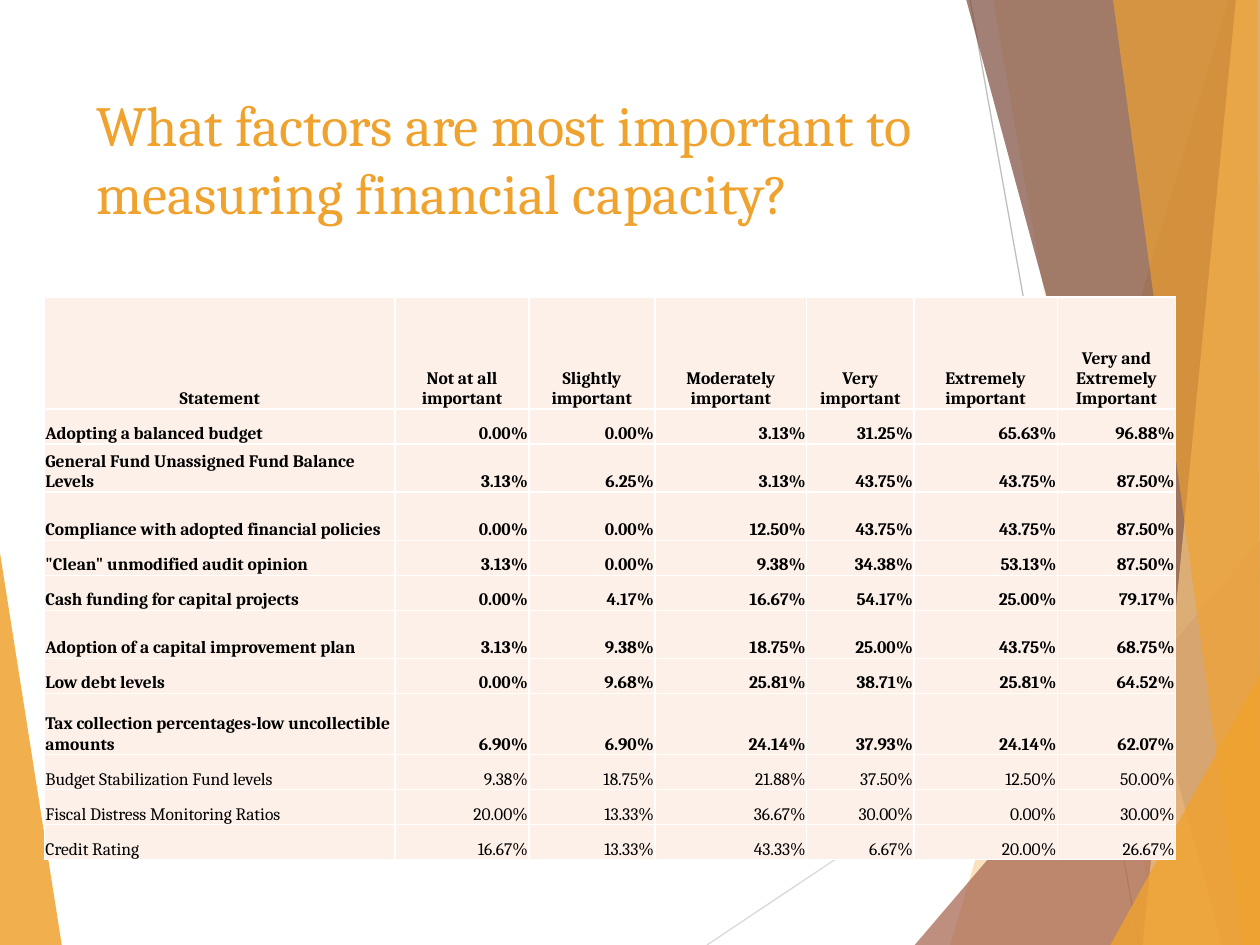
from pptx import Presentation
from pptx.util import Pt
from pptx.dml.color import RGBColor
from pptx.enum.shapes import MSO_CONNECTOR
from pptx.enum.text import MSO_ANCHOR, PP_ALIGN
from pptx.oxml.ns import qn
from lxml.etree import SubElement

W, H = 720, 540
FONT = "Cambria"
TITLE = "What factors are most important to measuring financial capacity?"

LEFT_WEDGE = ([(0, 316), (35.3, H), (0, H)], "F0A22E", 85)
RIGHT_FACETS = [
    ([(702, 0), (543, H), (W, H), (W, 0)], "F0A22E", 30),
    ([(567.4, 0), (661.7, H), (W, H), (W, 0)], "F0A22E", 20),
    ([(522.7, H), (W, 309), (W, H)], "A5644E", 72),
    ([(552.2, 0), (698.4, H), (W, H), (W, 0)], "7C4B3B", 70),
    ([(706.3, 0), (653, H), (W, H), (W, 0)], "F6C782", 70),
    ([(636, 0), (710, H), (W, H), (718.6, 0)], "F0A22E", 65),
    ([(634.5, H), (W, 385.5), (W, H)], "F0A22E", 80),
]
LINES = [((404, H), (W, 329), "D9D9D9"), ((554.4, 0), (651, H), "BFBFBF")]

HEADERS = ["Statement", "Not at all important", "Slightly important", "Moderately important",
           "Very important", "Extremely important", "Very and Extremely Important"]
ROWS = [
    ("Adopting a balanced budget", 0, 0, 3.13, 31.25, 65.63, 96.88),
    ("General Fund Unassigned Fund Balance Levels", 3.13, 6.25, 3.13, 43.75, 43.75, 87.5),
    ("Compliance with adopted financial policies", 0, 0, 12.5, 43.75, 43.75, 87.5),
    ('"Clean" unmodified audit opinion', 3.13, 0, 9.38, 34.38, 53.13, 87.5),
    ("Cash funding for capital projects", 0, 4.17, 16.67, 54.17, 25, 79.17),
    ("Adoption of a capital improvement plan", 3.13, 9.38, 18.75, 25, 43.75, 68.75),
    ("Low debt levels", 0, 9.68, 25.81, 38.71, 25.81, 64.52),
    ("Tax collection percentages-low uncollectible amounts", 6.9, 6.9, 24.14, 37.93, 24.14, 62.07),
    ("Budget Stabilization Fund levels", 9.38, 18.75, 21.88, 37.5, 12.5, 50),
    ("Fiscal Distress Monitoring Ratios", 20, 13.33, 36.67, 30, 0, 30),
    ("Credit Rating", 16.67, 13.33, 43.33, 6.67, 20, 26.67),
]
BOLD_ROWS = 8
COL_WIDTHS = [200.4, 76.4, 72, 86.8, 61.2, 82, 67.6]
ROW_HEIGHTS = [64, 20, 27.5, 27.5, 20, 20, 27.5, 20, 35, 20, 20, 20]


def rgb(value):
    return RGBColor.from_string(value)


def style(p, size, color, bold=False):
    for r in p.runs:
        r.font.name = FONT
        r.font.size = Pt(size)
        r.font.bold = bold
        r.font.color.rgb = rgb(color)


def add_facet(s, points, color, opacity):
    fb = s.shapes.build_freeform(Pt(points[0][0]), Pt(points[0][1]))
    fb.add_line_segments([(Pt(x), Pt(y)) for x, y in points[1:]], close=True)
    sp = fb.convert_to_shape()
    sp.shadow.inherit = False
    sp.line.fill.background()
    sp.fill.solid()
    sp.fill.fore_color.rgb = rgb(color)
    clr = sp._element.spPr.find(qn("a:solidFill"))[0]
    SubElement(clr, qn("a:alpha")).set("val", str(opacity * 1000))


def add_line(s, start, end, color):
    cx = s.shapes.add_connector(MSO_CONNECTOR.STRAIGHT, *map(Pt, start + end))
    cx.line.color.rgb = rgb(color)
    cx.line.width = Pt(0.75)
    SubElement(cx._element.spPr, qn("a:effectLst"))


def add_title(s):
    tf = s.shapes.add_textbox(Pt(48), Pt(48), Pt(500), Pt(104)).text_frame
    tf.word_wrap = True
    tf.vertical_anchor = MSO_ANCHOR.TOP
    p = tf.paragraphs[0]
    p.text = TITLE
    style(p, 32.4, "F0A22E")


def add_borders(cell):
    tcPr = cell._tc.get_or_add_tcPr()
    for side in "LRTB":
        ln = SubElement(tcPr, qn(f"a:ln{side}"), w=str(Pt(1)))
        SubElement(SubElement(ln, qn("a:solidFill")), qn("a:srgbClr")).set("val", "FFFFFF")


def fill_cell(cell, text, align, bold):
    cell.margin_left = cell.margin_right = cell.margin_top = Pt(0.6)
    cell.margin_bottom = 0
    cell.vertical_anchor = MSO_ANCHOR.BOTTOM
    add_borders(cell)
    cell.fill.solid()
    cell.fill.fore_color.rgb = rgb("FCF0E8")
    p = cell.text_frame.paragraphs[0]
    p.text = text
    p.alignment = align
    style(p, 10, "000000", bold)


def add_ratings(s):
    table = s.shapes.add_table(len(ROWS) + 1, len(HEADERS), Pt(25.4), Pt(169.8),
                               Pt(sum(COL_WIDTHS)), Pt(sum(ROW_HEIGHTS))).table
    table.first_row = table.horz_banding = False
    for col, width in zip(table.columns, COL_WIDTHS):
        col.width = Pt(width)
    for row, height in zip(table.rows, ROW_HEIGHTS):
        row.height = Pt(height)
    for j, text in enumerate(HEADERS):
        fill_cell(table.cell(0, j), text, PP_ALIGN.CENTER, True)
    for i, (statement, *shares) in enumerate(ROWS, 1):
        bold = i <= BOLD_ROWS
        fill_cell(table.cell(i, 0), statement, PP_ALIGN.LEFT, bold)
        for j, share in enumerate(shares, 1):
            fill_cell(table.cell(i, j), f"{share:.2f}%", PP_ALIGN.RIGHT, bold)


def main():
    prs = Presentation()
    prs.slide_width, prs.slide_height = Pt(W), Pt(H)
    s = prs.slides.add_slide(prs.slide_layouts[6])
    add_facet(s, *LEFT_WEDGE)
    for line in LINES:
        add_line(s, *line)
    for facet in RIGHT_FACETS:
        add_facet(s, *facet)
    add_title(s)
    add_ratings(s)
    prs.save("out.pptx")


if __name__ == "__main__":
    main()
